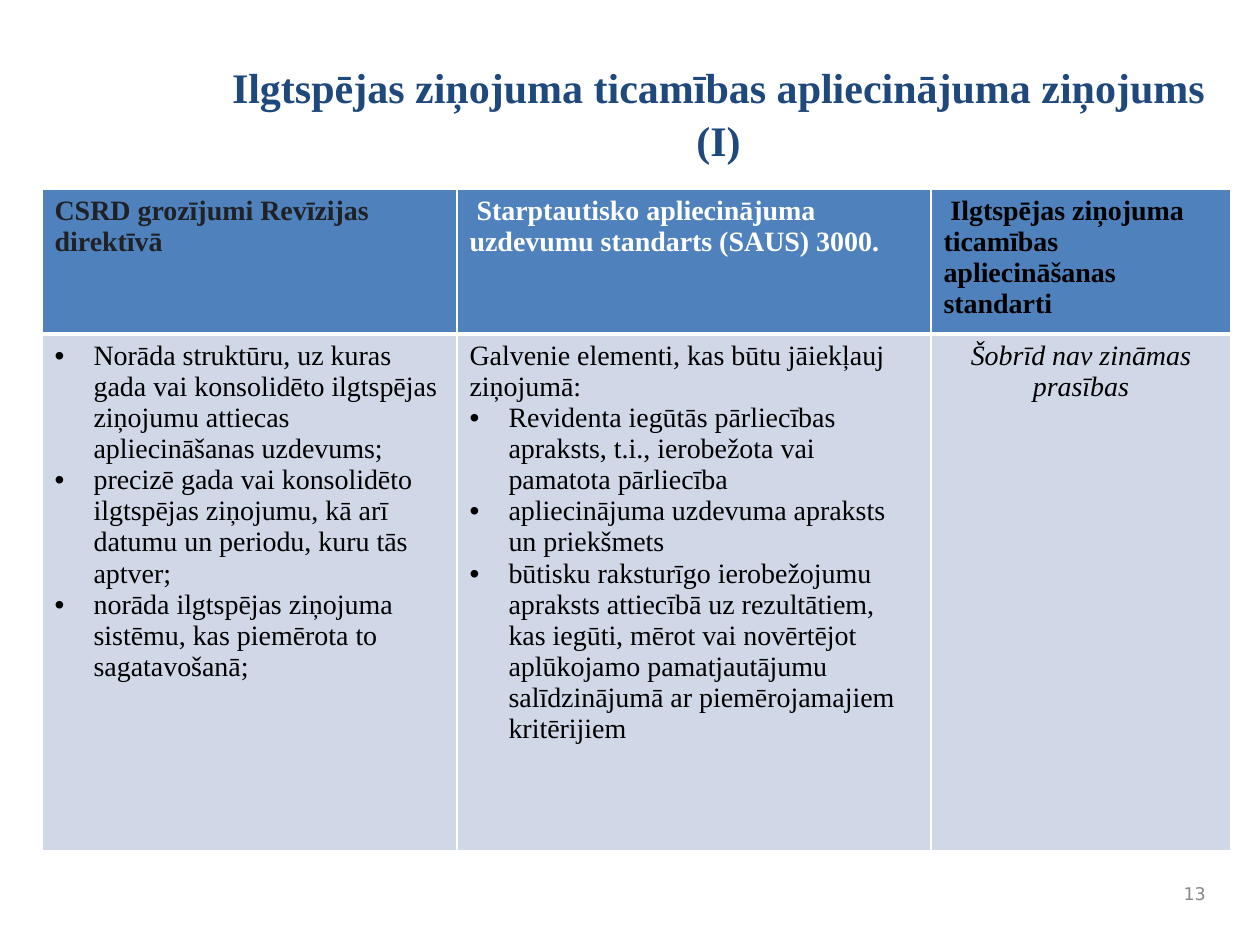
from lxml import etree
from pptx import Presentation
from pptx import util as u
from pptx.dml.color import RGBColor
from pptx.enum import text
from pptx.oxml.ns import qn

BLUE = RGBColor(0x4F, 0x81, 0xBD)
PALE = RGBColor(0xD0, 0xD8, 0xE8)
NAVY = RGBColor(0x1F, 0x49, 0x7D)
DARK = RGBColor(0x20, 0x21, 0x24)
GREY = RGBColor(0x89, 0x89, 0x89)
BLACK = RGBColor(0, 0, 0)
WHITE = RGBColor(255, 255, 255)
SERIF = "Times New Roman"

TITLE = "Ilgtspējas ziņojuma ticamības apliecinājuma ziņojums (I)"
PAGE = "13"
HEADERS = [
    ("CSRD grozījumi Revīzijas direktīvā", DARK),
    (" Starptautisko apliecinājuma uzdevumu standarts (SAUS) 3000.", WHITE),
    (" Ilgtspējas ziņojuma ticamības apliecināšanas standarti", BLACK),
]
BODY = [
    [("bullet", "Norāda struktūru, uz kuras gada vai konsolidēto ilgtspējas ziņojumu attiecas apliecināšanas uzdevums;"),
     ("bullet", "precizē gada vai konsolidēto ilgtspējas ziņojumu, kā arī datumu un periodu, kuru tās aptver;"),
     ("bullet", "norāda ilgtspējas ziņojuma sistēmu, kas piemērota to sagatavošanā;")],
    [("plain", "Galvenie elementi, kas būtu jāiekļauj ziņojumā:"),
     ("bullet", "Revidenta iegūtās pārliecības apraksts, t.i., ierobežota vai pamatota pārliecība"),
     ("bullet", "apliecinājuma uzdevuma apraksts un priekšmets"),
     ("bullet", "būtisku raksturīgo ierobežojumu apraksts attiecībā uz rezultātiem, kas iegūti, mērot vai novērtējot aplūkojamo pamatjautājumu salīdzinājumā ar piemērojamajiem kritērijiem")],
    [("note", "Šobrīd nav zināmas prasības")],
]
COLS = [415, 474, 300]
ROWS = [145, 517]
INDENT = 39


def px(n):
    return u.Emu(round(n * 914400 / 126))


def write(p, words, color, size=16, name=SERIF, align=None, **fmt):
    r = p.add_run()
    r.text = words
    p.alignment = align
    for key, value in dict(fmt, size=u.Pt(size), name=name).items():
        setattr(r.font, key, value)
    r.font.color.rgb = color


def add_bullet(p):
    pPr = p._p.get_or_add_pPr()
    pPr.set("marL", str(px(INDENT)))
    pPr.set("indent", str(-px(INDENT)))
    etree.SubElement(pPr, qn("a:buFont")).set("typeface", "Arial")
    etree.SubElement(pPr, qn("a:buChar")).set("char", "•")


def set_borders(cell, widths):
    tcPr = cell._tc.get_or_add_tcPr()
    for i, (side, width) in enumerate(widths.items()):
        ln = etree.Element(qn("a:ln" + side), w=str(u.Pt(width)))
        fill = etree.SubElement(ln, qn("a:solidFill"))
        etree.SubElement(fill, qn("a:srgbClr"), val=str(WHITE))
        tcPr.insert(i, ln)


def paragraphs(tf, count):
    return [tf.paragraphs[0]] + [tf.add_paragraph() for _ in range(count - 1)]


prs = Presentation()
prs.slide_width, prs.slide_height = px(1260), px(945)
s = prs.slides.add_slide(prs.slide_layouts[5])

title = s.shapes.title
title.left, title.top, title.width, title.height = map(px, (219, 53, 999, 142))
tf = title.text_frame
tf.vertical_anchor = text.MSO_ANCHOR.TOP
tf.auto_size = text.MSO_AUTO_SIZE.NONE
tf.paragraphs[0].line_spacing = 1.05
write(tf.paragraphs[0], TITLE, NAVY, 24, align=text.PP_ALIGN.CENTER, bold=True)

table = s.shapes.add_table(2, 3, px(42), px(189), px(sum(COLS)), px(sum(ROWS))).table
table.horz_banding = False
for row, height in zip(table.rows, ROWS):
    row.height = px(height)
for c, (width, (header, color), items) in enumerate(zip(COLS, HEADERS, BODY)):
    table.columns[c].width = px(width)
    head, body = table.cell(0, c), table.cell(1, c)
    for cell, fill, top, bottom in ((head, BLUE, 1, 3), (body, PALE, 3, 1)):
        cell.fill.solid()
        cell.fill.fore_color.rgb = fill
        set_borders(cell, {"L": 1, "R": 1, "T": top, "B": bottom})
    write(head.text_frame.paragraphs[0], header, color, bold=True)
    for p, (kind, words) in zip(paragraphs(body.text_frame, len(items)), items):
        if kind == "bullet":
            add_bullet(p)
        note = kind == "note"
        write(p, words, BLACK, align=text.PP_ALIGN.CENTER if note else None,
              bold=False, italic=note)

number = s.shapes.add_textbox(*map(px, (1126, 872, 92, 42)))
tf = number.text_frame
tf.word_wrap = True
tf.vertical_anchor = text.MSO_ANCHOR.MIDDLE
write(tf.paragraphs[0], PAGE, GREY, 10, "DejaVu Sans", text.PP_ALIGN.RIGHT)

prs.save("out.pptx")
